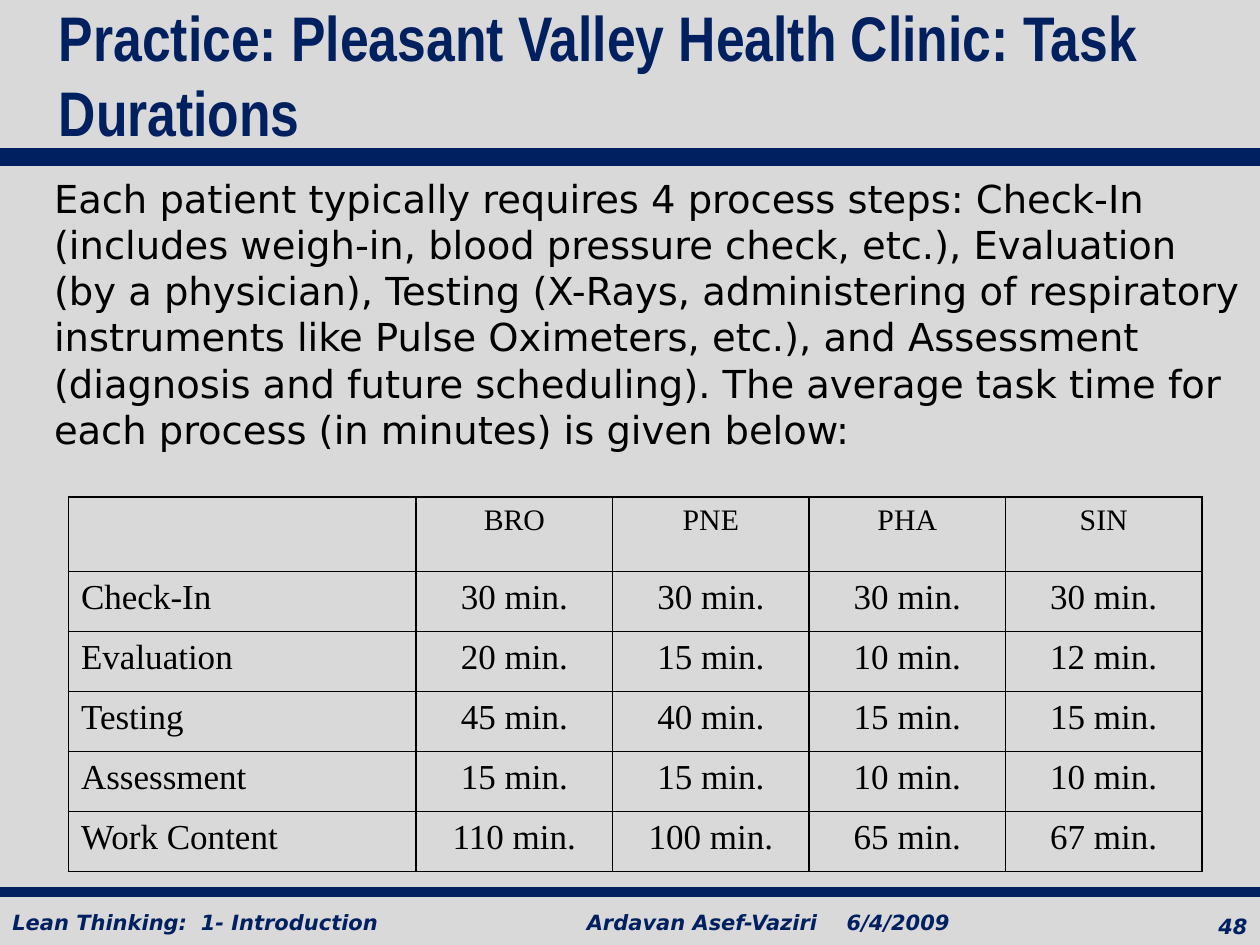
import pptx
import pptx.util
import pptx.dml.color
import pptx.enum.shapes
import pptx.enum.text
import pptx.oxml
import pptx.oxml.ns
from lxml import etree

Cm = pptx.util.Cm
Pt = pptx.util.Pt
RGBColor = pptx.dml.color.RGBColor
ALIGN = pptx.enum.text.PP_ALIGN
qn = pptx.oxml.ns.qn

NAVY = RGBColor(0x00, 0x20, 0x60)
BLACK = RGBColor(0x00, 0x00, 0x00)
GREY = RGBColor(0xD9, 0xD9, 0xD9)

SANS = "DejaVu Sans"
SERIF = "Times New Roman"
NARROW = "Arial Narrow"

TITLE = "Practice: Pleasant Valley Health Clinic: Task Durations"
BODY = (
    "Each patient typically requires 4 process steps: Check-In (includes "
    "weigh-in, blood pressure check, etc.), Evaluation (by a physician), "
    "Testing (X-Rays, administering of respiratory instruments like Pulse "
    "Oximeters, etc.), and Assessment (diagnosis and future scheduling). "
    "The average task time for each process (in minutes) is given below:"
)
HEADS = ["BRO", "PNE", "PHA", "SIN"]
TASKS = [
    ("Check-In", [30, 30, 30, 30]),
    ("Evaluation", [20, 15, 10, 12]),
    ("Testing", [45, 40, 15, 15]),
    ("Assessment", [15, 15, 10, 10]),
    ("Work Content", [110, 100, 65, 67]),
]


def style(para, font, size, color, bold=False, italic=False):
    for run in para.runs:
        run.font.name = font
        run.font.size = Pt(size)
        run.font.color.rgb = color
        run.font.bold = bold
        run.font.italic = italic


def add_text(slide, text, box, font, size, color, bold=False, italic=False):
    shape = slide.shapes.add_textbox(*[Cm(v) for v in box])
    frame = shape.text_frame
    frame.word_wrap = True
    frame.text = text
    style(frame.paragraphs[0], font, size, color, bold, italic)
    return frame


def add_foot(slide, text, box, align=ALIGN.LEFT, tab=None):
    frame = add_text(slide, text, box, SANS, 12, NAVY, True, True)
    para = frame.paragraphs[0]
    para.alignment = align
    if tab:
        props = para._p.get_or_add_pPr()
        stops = etree.SubElement(props, qn("a:tabLst"))
        etree.SubElement(stops, qn("a:tab"), pos=str(Cm(tab)), algn="l")


def add_rule(slide, top, width):
    kind = pptx.enum.shapes.MSO_CONNECTOR.STRAIGHT
    line = slide.shapes.add_connector(kind, 0, Cm(top), Cm(25.4), Cm(top))
    line.line.color.rgb = NAVY
    line.line.width = Pt(width)
    etree.SubElement(line._element.spPr, qn("a:effectLst"))


def add_edges(cell):
    props = cell._tc.get_or_add_tcPr()
    for index, side in enumerate(["lnL", "lnR", "lnT", "lnB"]):
        edge = etree.Element(qn("a:" + side), w=str(Pt(1)))
        fill = etree.SubElement(edge, qn("a:solidFill"))
        etree.SubElement(fill, qn("a:srgbClr"), val=str(BLACK))
        props.insert(index, edge)


def fill_cell(cell, text, size, align):
    cell.fill.background()
    add_edges(cell)
    if not text:
        return
    cell.text = text
    para = cell.text_frame.paragraphs[0]
    para.alignment = align
    # Hanging indent
    props = para._p.get_or_add_pPr()
    props.set("marL", str(Cm(0.95)))
    props.set("indent", str(-Cm(0.95)))
    style(para, SERIF, size, BLACK)


def add_times(slide):
    rows = [[""] + HEADS]
    rows += [[task] + [f"{mins} min." for mins in times] for task, times in TASKS]
    frame = slide.shapes.add_table(
        len(rows), len(rows[0]), Cm(1.38), Cm(10.02), Cm(22.86), Cm(7.54))
    table = frame.table
    table.first_row = False
    table.horz_banding = False
    for c, col in enumerate(table.columns):
        col.width = Cm(3.96 if c else 7.01)
    for r, row in enumerate(table.rows):
        row.height = Cm(1.21 if r else 1.5)
        for c, text in enumerate(rows[r]):
            align = ALIGN.CENTER if c else ALIGN.LEFT
            fill_cell(table.cell(r, c), text, 20 if r else 17, align)


def main():
    deck = pptx.Presentation()
    deck.slide_width = Cm(25.4)
    deck.slide_height = Cm(19.05)
    slide = deck.slides.add_slide(deck.slide_layouts[6])
    slide.background.fill.solid()
    slide.background.fill.fore_color.rgb = GREY

    # Footer
    add_foot(slide, "48", (23.5, 18.29, 1.9, 0.76), ALIGN.RIGHT)
    add_foot(slide, "Ardavan Asef-Vaziri\t6/4/2009",
             (11.58, 18.21, 8.51, 0.76), tab=5.24)
    add_foot(slide, "Lean Thinking:\t1- Introduction",
             (0, 18.21, 11.86, 0.76), tab=3.8)

    # Rules under the title and above the footer
    add_rule(slide, 3.17, 10)
    add_rule(slide, 17.98, 6)

    # Title and body
    title = add_text(slide, TITLE, (0.94, 0, 23.9, 2.97), NARROW, 36, NAVY, True)
    title.vertical_anchor = pptx.enum.text.MSO_ANCHOR.MIDDLE
    add_text(slide, BODY, (0.84, 3.4, 24.56, 5.89), SANS, 22, BLACK)

    # Task durations
    add_times(slide)

    deck.save("out.pptx")


if __name__ == "__main__":
    main()
